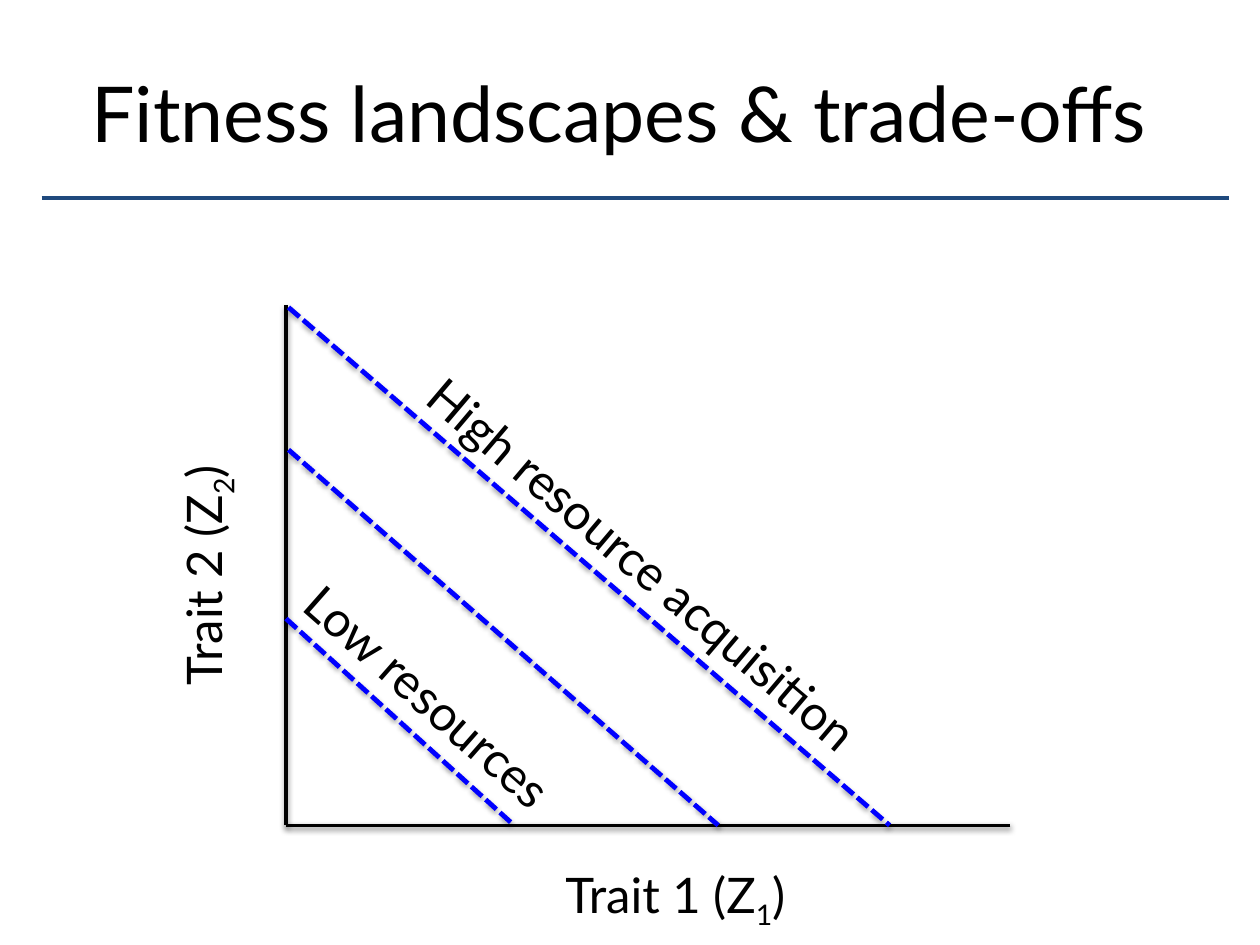
from dataclasses import dataclass

from lxml import etree
from pptx import Presentation
from pptx.dml.color import RGBColor
from pptx.enum.dml import MSO_LINE
from pptx.enum.shapes import MSO_CONNECTOR
from pptx.enum.text import MSO_ANCHOR, PP_ALIGN
from pptx.oxml.ns import qn
from pptx.shapes.connector import Connector
from pptx.util import Inches, Pt

STRAIGHT = MSO_CONNECTOR.STRAIGHT
SHORT_DASH = MSO_LINE.SQUARE_DOT
CENTER = PP_ALIGN.CENTER
TOP = MSO_ANCHOR.TOP


@dataclass(frozen=True)
class Theme:
    font: str = "Lato"
    title_size: float = 44
    label_size: float = 28
    rule_width: float = 2
    tradeoff_width: float = 2.75
    ink: str = "000000"
    rule: str = "1F497D"
    tradeoff: str = "0000FF"


@dataclass(frozen=True)
class Segment:
    start: tuple[float, float]
    end: tuple[float, float]
    color: str
    width: float
    dashed: bool = False
    shadow: bool = True


@dataclass(frozen=True)
class Label:
    text: str
    left: float
    top: float
    width: float
    height: float = 0.57
    size: float = 28
    rotation: float = 0
    subscript: str = ""
    ending: str = ""


THEME = Theme()
ORIGIN_X, ORIGIN_Y = 2.27, 6.55

TITLE = Label("Fitness landscapes & trade-offs ", -0.17, 0.47, 10.33, 1.83, THEME.title_size)
TITLE_RULE = Segment((0.33, 1.57), (9.75, 1.57), THEME.rule, THEME.rule_width, shadow=False)
AXES = [
    Segment((ORIGIN_X, 2.42), (ORIGIN_X, ORIGIN_Y), THEME.ink, THEME.rule_width),
    Segment((8.02, ORIGIN_Y), (ORIGIN_X, ORIGIN_Y), THEME.ink, THEME.rule_width),
]
TRADEOFFS = [
    Segment(start, (end_x, ORIGIN_Y), THEME.tradeoff, THEME.tradeoff_width, dashed=True)
    for start, end_x in [((2.29, 3.57), 5.7), ((2.29, 2.44), 7.06), ((ORIGIN_X, 4.91), 4.08)]
]
AXIS_LABELS = [
    Label("Trait 1 (Z", 4.08, 6.81, 2.56, subscript="1", ending=")"),
    Label("Trait 2 (Z", 0.33, 4.28, 2.56, rotation=270, subscript="2", ending=")"),
]
TRADEOFF_LABELS = [
    Label("High resource acquisition", 2.47, 4.19, 5.26, rotation=40.4),
    Label("Low resources", 1.63, 5.24, 3.54, rotation=41.4),
]


def set_effects(connector: Connector, shadow: bool) -> None:
    effects = etree.SubElement(connector._element.spPr, qn("a:effectLst"))
    if shadow:
        outer = etree.SubElement(
            effects, qn("a:outerShdw"), blurRad=str(Pt(3.1)), dist=str(Pt(1.6)),
            dir="5400000", rotWithShape="0",
        )
        color = etree.SubElement(outer, qn("a:srgbClr"), val=THEME.ink)
        etree.SubElement(color, qn("a:alpha"), val="38000")


def draw_segment(shapes, segment: Segment) -> None:
    connector = shapes.add_connector(
        STRAIGHT, *(Inches(value) for value in segment.start + segment.end)
    )
    connector.line.color.rgb = RGBColor.from_string(segment.color)
    connector.line.width = Pt(segment.width)
    if segment.dashed:
        connector.line.dash_style = SHORT_DASH
    set_effects(connector, segment.shadow)


def add_run(paragraph, text: str, size: float, baseline: int = 0) -> None:
    run = paragraph.add_run()
    run.text = text
    run.font.name = THEME.font
    run.font.size = Pt(size)
    run.font.color.rgb = RGBColor.from_string(THEME.ink)
    if baseline:
        run.font._element.set("baseline", str(baseline * 1000))


def draw_label(shapes, label: Label) -> None:
    shape = shapes.add_textbox(
        Inches(label.left), Inches(label.top), Inches(label.width), Inches(label.height)
    )
    shape.rotation = label.rotation
    shape.text_frame.word_wrap = True
    shape.text_frame.vertical_anchor = TOP
    paragraph = shape.text_frame.paragraphs[0]
    paragraph.alignment = CENTER
    for text, baseline in [(label.text, 0), (label.subscript, -25), (label.ending, 0)]:
        if text:
            add_run(paragraph, text, label.size, baseline)


def main() -> None:
    presentation = Presentation()
    presentation.slide_width = Inches(10)
    presentation.slide_height = Inches(7.5)
    slide = presentation.slides.add_slide(presentation.slide_layouts[6])

    draw_label(slide.shapes, TITLE)
    draw_segment(slide.shapes, TITLE_RULE)
    axis_group = slide.shapes.add_group_shape()
    for axis in AXES:
        draw_segment(axis_group.shapes, axis)
    for label in AXIS_LABELS:
        draw_label(slide.shapes, label)
    for tradeoff in TRADEOFFS:
        draw_segment(slide.shapes, tradeoff)
    for label in TRADEOFF_LABELS:
        draw_label(slide.shapes, label)

    presentation.save("out.pptx")


if __name__ == "__main__":
    main()
